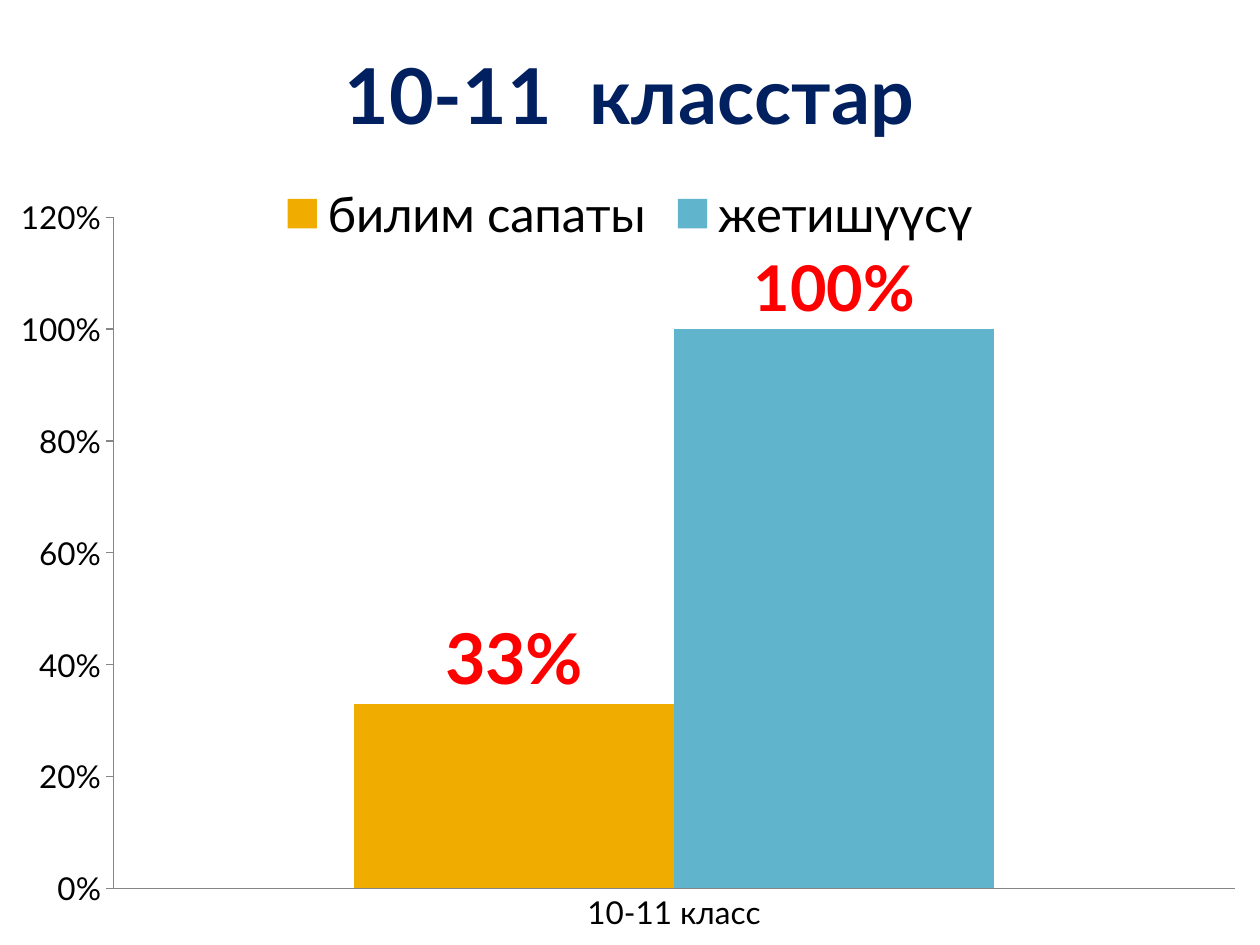
import pptx
import pptx.chart.data
import pptx.dml.color
import pptx.enum.chart
import pptx.oxml
import pptx.oxml.ns
import pptx.util
from pptx.util import Cm

SLIDE_SIZE = Cm(25.4), Cm(19.05)
FONT = "Lato"
HEADING = "10-11  класстар"
CLASSES = ["10-11 класс"]
# name, values, fill colour, label size
RESULTS = [
    ("билим сапаты", [0.33], "F0AD00", 40),
    ("жетишүүсү", [1], "60B5CC", 36),
]
PLOT_AREA = {"x": 0.09, "y": 0.23, "w": 0.89, "h": 0.71}
AXIS_GREY = "868686"


def rgb(hex_colour):
    return pptx.dml.color.RGBColor.from_string(hex_colour)


def style(font, size, colour="000000", bold=False):
    font.name = FONT
    font.size = pptx.util.Pt(size)
    font.bold = bold
    font.color.rgb = rgb(colour)


def place_plot(chart, fractions):
    """Fix the inner plot area at fractions of the chart's size."""
    plot_area = chart.plots[0]._element.getparent()
    for automatic in plot_area.findall(pptx.oxml.ns.qn("c:layout")):
        plot_area.remove(automatic)
    modes = "".join(f'<c:{side}Mode val="edge"/>' for side in "xy")
    lengths = "".join(f'<c:{key} val="{part}"/>' for key, part in fractions.items())
    plot_area.insert(0, pptx.oxml.parse_xml(
        f'<c:layout {pptx.oxml.ns.nsdecls("c")}><c:manualLayout>'
        f'<c:layoutTarget val="inner"/>{modes}{lengths}'
        "</c:manualLayout></c:layout>"))


def style_axes(chart):
    marks = pptx.enum.chart.XL_TICK_MARK
    classes, share = chart.category_axis, chart.value_axis
    share.minimum_scale, share.maximum_scale, share.major_unit = 0, 1.2, 0.2
    share.has_major_gridlines = False
    share.tick_labels.number_format = "0%"
    share.tick_labels.number_format_is_linked = False
    for axis, mark in ((classes, marks.NONE), (share, marks.OUTSIDE)):
        axis.major_tick_mark = mark
        axis.minor_tick_mark = marks.NONE
        axis.format.line.color.rgb = rgb(AXIS_GREY)
        style(axis.tick_labels.font, 18)


def add_results_chart(slide):
    results = pptx.chart.data.CategoryChartData(number_format="0%")
    results.categories = CLASSES
    for name, values, _, _ in RESULTS:
        results.add_series(name, values)
    chart = slide.shapes.add_chart(
        pptx.enum.chart.XL_CHART_TYPE.COLUMN_CLUSTERED,
        0, 0, *SLIDE_SIZE, results).chart
    style(chart.font, 18)

    chart.has_title = True
    heading = chart.chart_title.text_frame
    heading.text = HEADING
    style(heading.paragraphs[0].font, 44, "002060", bold=True)
    chart.chart_title.include_in_layout = False

    chart.has_legend = True
    chart.legend.position = pptx.enum.chart.XL_LEGEND_POSITION.TOP
    chart.legend.include_in_layout = False
    style(chart.legend.font, 28)

    columns = chart.plots[0]
    columns.gap_width = 150
    columns.overlap = 0
    columns.vary_by_categories = False
    for series, (_, _, colour, label_size) in zip(columns.series, RESULTS):
        series.format.fill.solid()
        series.format.fill.fore_color.rgb = rgb(colour)
        labels = series.data_labels
        labels.show_value = True
        labels.number_format = "0%"
        labels.number_format_is_linked = False
        labels.position = pptx.enum.chart.XL_LABEL_POSITION.OUTSIDE_END
        style(labels.font, label_size, "FF0000", bold=True)

    style_axes(chart)
    place_plot(chart, PLOT_AREA)


def main():
    deck = pptx.Presentation()
    deck.slide_width, deck.slide_height = SLIDE_SIZE
    blank_layout = deck.slide_layouts[6]
    add_results_chart(deck.slides.add_slide(blank_layout))
    deck.save("out.pptx")


if __name__ == "__main__":
    main()
